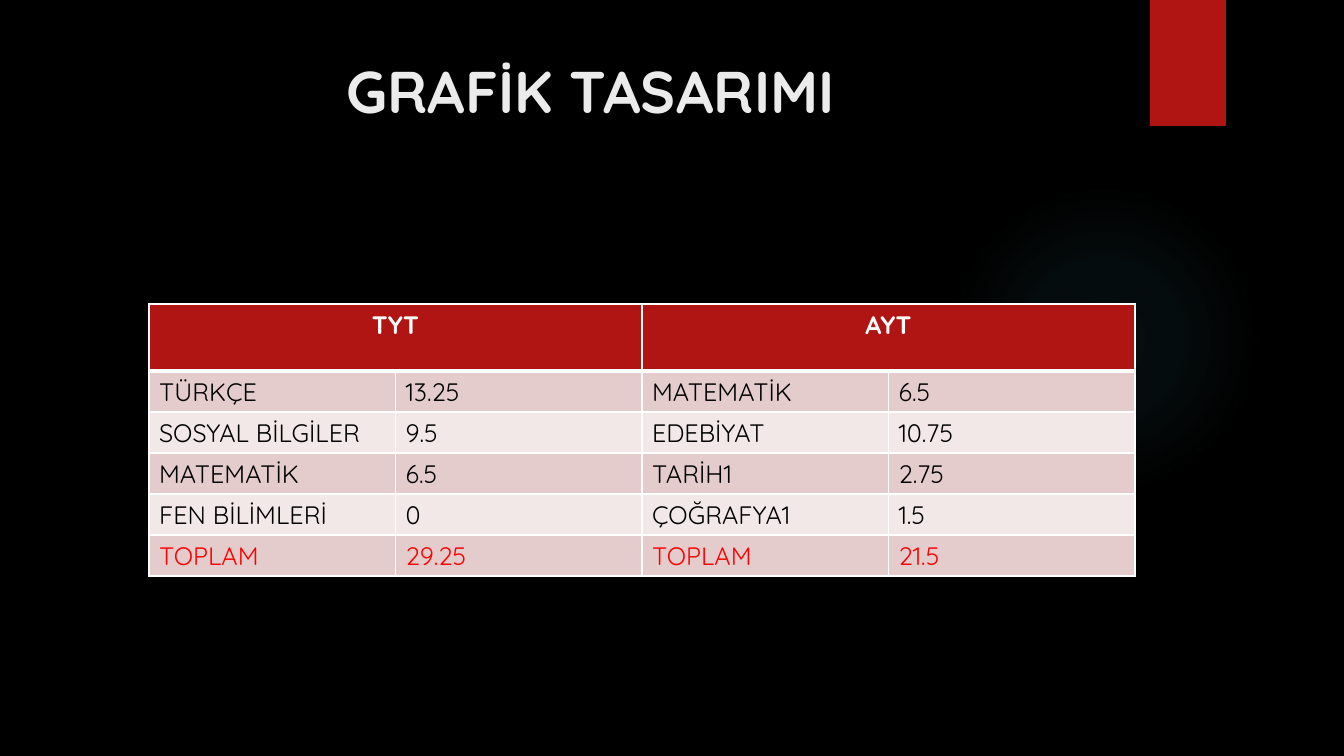
from dataclasses import dataclass

from lxml.etree import SubElement
from pptx import Presentation
from pptx.dml.color import RGBColor
from pptx.enum.shapes import MSO_SHAPE
from pptx.enum.text import MSO_ANCHOR, PP_ALIGN
from pptx.oxml import parse_xml
from pptx.oxml.ns import nsdecls, qn
from pptx.util import Pt

# Content
TITLE = "GRAFİK TASARIMI"
EXAMS = ["TYT", "AYT"]
SCORES = [
    ("TÜRKÇE", "13.25", "MATEMATİK", "6.5"),
    ("SOSYAL BİLGİLER", "9.5", "EDEBİYAT", "10.75"),
    ("MATEMATİK", "6.5", "TARİH1", "2.75"),
    ("FEN BİLİMLERİ", "0", "ÇOĞRAFYA1", "1.5"),
    ("TOPLAM", "29.25", "TOPLAM", "21.5"),
]


@dataclass(frozen=True)
class Theme:
    font: str = "Quicksand"
    background: str = "000000"
    title: str = "EBEBEB"
    accent: str = "B01513"
    bands: tuple = ("E4CCCC", "F2E8E7")
    text: str = "000000"
    total: str = "FF0000"
    white: str = "FFFFFF"
    glow: str = "50B9C1"
    title_size: int = 42
    table_size: int = 18


THEME = Theme()

# Layout in px: left, top, width, height
SLIDE_W, SLIDE_H = 1344, 756
GLOW_BOX = (949, 184, 310, 310)
TAB_BOX = (1150, 0, 76, 126)
TITLE_BOX = (72, 50, 1037, 154)
TABLE_LEFT, TABLE_TOP, TABLE_W = 149, 304, 986
HEADER_H, ROW_H = 67, 41
GLOW_STOPS = [(0, 7), (36, 6), (69, 0)]  # position %, opacity %
LINE, HEADER_LINE = 1, 3  # pt


def px(n):
    return round(n * 914400 / 100.8)


def box(dims):
    return [px(n) for n in dims]


def rgb(color):
    return RGBColor.from_string(color)


def write(p, text, size, color, bold=False, align=PP_ALIGN.LEFT):
    p.text = text
    p.alignment = align
    p.font.name = THEME.font
    p.font.size = Pt(size)
    p.font.bold = bold
    p.font.color.rgb = rgb(color)


def add_plain_shape(s, kind, dims):
    sp = s.shapes.add_shape(kind, *box(dims))
    sp.shadow.inherit = False
    sp.line.fill.background()
    return sp


def add_glow(s):
    sp = add_plain_shape(s, MSO_SHAPE.OVAL, GLOW_BOX)
    stops = "".join(
        f'<a:gs pos="{pos * 1000}"><a:srgbClr val="{THEME.glow}">'
        f'<a:alpha val="{alpha * 1000}"/></a:srgbClr></a:gs>'
        for pos, alpha in GLOW_STOPS
    )
    sp._element.spPr.find(qn("a:prstGeom")).addnext(parse_xml(
        f'<a:gradFill {nsdecls("a")}><a:gsLst>{stops}</a:gsLst>'
        '<a:path path="circle"><a:fillToRect l="50000" t="50000" r="50000" b="50000"/>'
        '</a:path></a:gradFill>'
    ))


def style_cell(cell, fill, top=LINE, bottom=LINE):
    # Borders come before the fill in the cell properties
    tcPr = cell._tc.get_or_add_tcPr()
    for side, width in (("L", LINE), ("R", LINE), ("T", top), ("B", bottom)):
        ln = SubElement(tcPr, qn(f"a:ln{side}"), w=str(Pt(width)))
        SubElement(SubElement(ln, qn("a:solidFill")), qn("a:srgbClr"), val=THEME.white)
    cell.fill.solid()
    cell.fill.fore_color.rgb = rgb(fill)


def add_scores(s):
    n_rows, n_cols = len(SCORES) + 1, len(SCORES[0])
    height = HEADER_H + ROW_H * len(SCORES)
    frame = s.shapes.add_table(n_rows, n_cols, *box((TABLE_LEFT, TABLE_TOP, TABLE_W, height)))
    table = frame.table
    table.horz_banding = False
    for col in table.columns:
        col.width = px(TABLE_W / n_cols)
    for i, row in enumerate(table.rows):
        row.height = px(ROW_H if i else HEADER_H)

    # Header: each exam spans a subject and a score column
    for c in range(n_cols):
        style_cell(table.cell(0, c), THEME.accent, bottom=HEADER_LINE)
    span = n_cols // len(EXAMS)
    for i, exam in enumerate(EXAMS):
        cell = table.cell(0, i * span)
        cell.merge(table.cell(0, (i + 1) * span - 1))
        write(cell.text_frame.paragraphs[0], exam, THEME.table_size, THEME.white,
              bold=True, align=PP_ALIGN.CENTER)

    # Score rows, the last one being the total
    for r, values in enumerate(SCORES, start=1):
        color = THEME.total if r == len(SCORES) else THEME.text
        for c, value in enumerate(values):
            cell = table.cell(r, c)
            style_cell(cell, THEME.bands[(r - 1) % 2], top=HEADER_LINE if r == 1 else LINE)
            write(cell.text_frame.paragraphs[0], value, THEME.table_size, color)


def main():
    prs = Presentation()
    prs.slide_width, prs.slide_height = px(SLIDE_W), px(SLIDE_H)
    s = prs.slides.add_slide(prs.slide_layouts[6])
    s.background.fill.solid()
    s.background.fill.fore_color.rgb = rgb(THEME.background)

    # Decoration
    add_glow(s)
    tab = add_plain_shape(s, MSO_SHAPE.RECTANGLE, TAB_BOX)
    tab.fill.solid()
    tab.fill.fore_color.rgb = rgb(THEME.accent)

    # Title
    tf = s.shapes.add_textbox(*box(TITLE_BOX)).text_frame
    tf.word_wrap = True
    tf.vertical_anchor = MSO_ANCHOR.TOP
    write(tf.paragraphs[0], TITLE, THEME.title_size, THEME.title,
          bold=True, align=PP_ALIGN.CENTER)

    add_scores(s)
    prs.save("out.pptx")


if __name__ == "__main__":
    main()
